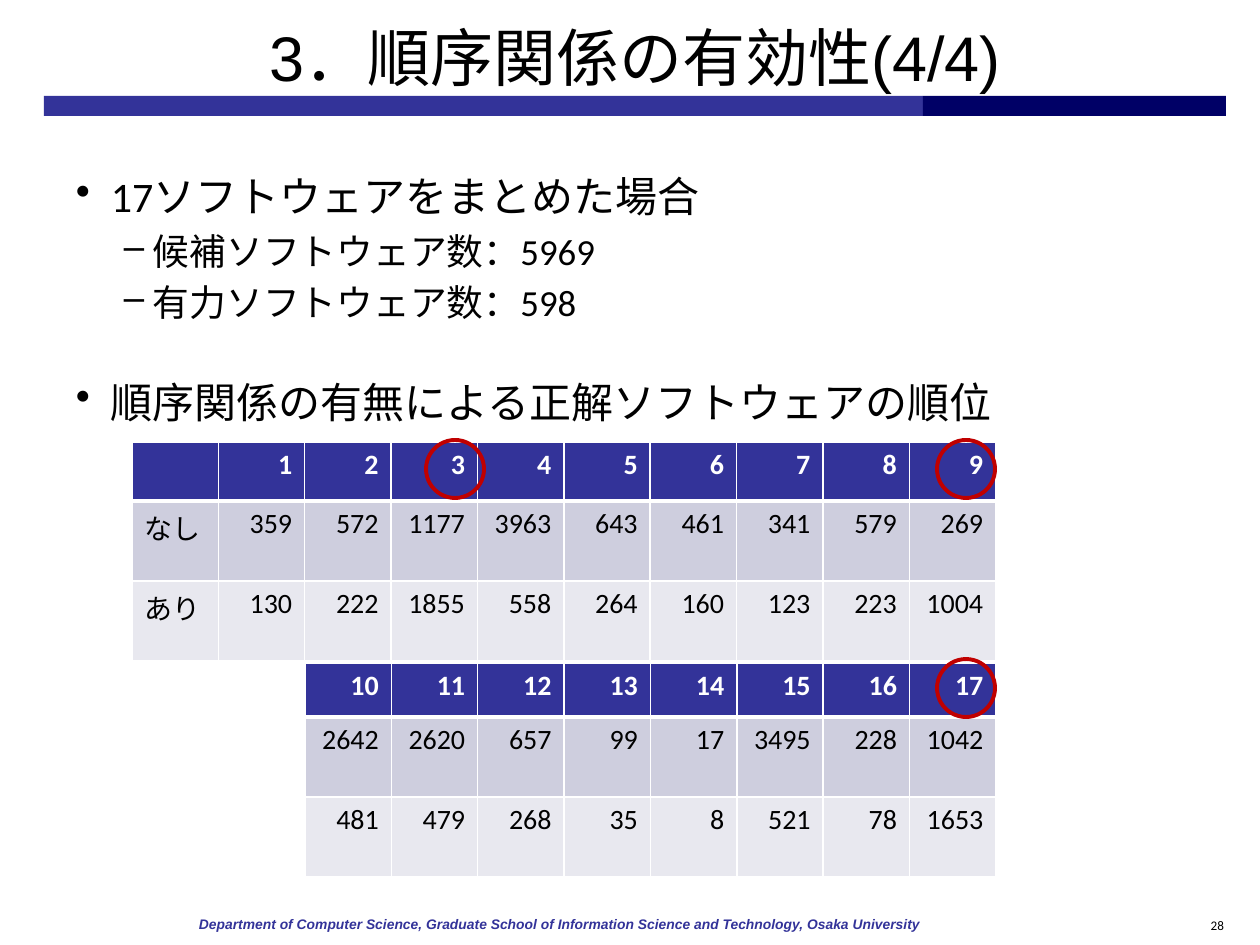
from dataclasses import dataclass

from lxml import etree
from pptx import Presentation
from pptx.dml.color import RGBColor
from pptx.enum.shapes import MSO_SHAPE
from pptx.enum.text import MSO_ANCHOR, PP_ALIGN
from pptx.oxml.ns import qn
from pptx.util import Pt

RECT, OVAL = MSO_SHAPE.RECTANGLE, MSO_SHAPE.OVAL
TOP, MIDDLE = MSO_ANCHOR.TOP, MSO_ANCHOR.MIDDLE
LEFT, CENTER, RIGHT = PP_ALIGN.LEFT, PP_ALIGN.CENTER, PP_ALIGN.RIGHT


@dataclass(frozen=True)
class Theme:
    """Colours, fonts and type sizes of the deck."""
    ink: str = "000000"
    white: str = "FFFFFF"
    bar: str = "333399"
    bar_end: str = "000066"
    bands: tuple = ("CECEDE", "E8E8EF")
    mark: str = "C00000"
    body: str = "Calibri"
    head: str = "Arial"
    title: float = 36
    level1: float = 24
    level2: float = 21
    cell: float = 16
    footer: float = 7.9
    number: float = 7.5


T = Theme()

RANKS_1_TO_9 = [
    ["", *range(1, 10)],
    ["なし", 359, 572, 1177, 3963, 643, 461, 341, 579, 269],
    ["あり", 130, 222, 1855, 558, 264, 160, 123, 223, 1004],
]
RANKS_10_TO_17 = [
    [*range(10, 18)],
    [2642, 2620, 657, 99, 17, 3495, 228, 1042],
    [481, 479, 268, 35, 8, 521, 78, 1653],
]


def px(n):
    """Convert px at 126 to the inch into EMU."""
    return round(n * 914400 / 126)


def add_run(p, text, size, font=T.body, color=T.ink, bold=False, italic=False):
    """Append one formatted run to a paragraph."""
    r = p.add_run()
    r.text = text
    r.font.size, r.font.name = Pt(size), font
    r.font.bold, r.font.italic = bold, italic
    r.font.color.rgb = RGBColor.from_string(color)


def add_frame(s, box, anchor=TOP, margins=(13, 6)):
    """Add a wrapping text box and return its text frame."""
    tf = s.shapes.add_textbox(*map(px, box)).text_frame
    tf.word_wrap, tf.vertical_anchor = True, anchor
    tf.margin_left = tf.margin_right = px(margins[0])
    tf.margin_top = tf.margin_bottom = px(margins[1])
    return tf


def add_preset(s, kind, box, fill=None, line=None):
    """Add a flat preset shape with an optional fill and outline."""
    sp = s.shapes.add_shape(kind, *map(px, box))
    sp.shadow.inherit = False
    if fill:
        sp.fill.solid()
        sp.fill.fore_color.rgb = RGBColor.from_string(fill)
    else:
        sp.fill.background()
    if line:
        sp.line.color.rgb = RGBColor.from_string(line)
        sp.line.width = Pt(2.25)
    else:
        sp.line.fill.background()


def add_title(s, x, y, w, h):
    """Place the title with the two-tone bar beneath it."""
    split, bar_h = 879, 20
    add_preset(s, RECT, (x, y + h, split, bar_h), T.bar)
    add_preset(s, RECT, (x + split, y + h, w - split, bar_h), T.bar_end)
    p = add_frame(s, (x, y, w, h), MIDDLE).paragraphs[0]
    p.alignment = CENTER
    for text, font in (("3．", T.head), ("順序関係の有効性", T.body), ("(4/4)", T.head)):
        add_run(p, text, T.title, font)


def add_bullet(p, text, level, before):
    """Fill a paragraph as a bullet of the given level."""
    char, margin, hang, size = (("•", 35, 35, T.level1), ("–", 77, 29, T.level2))[level]
    p.level = level
    p.space_before = Pt(before)
    pPr = p._p.get_or_add_pPr()
    pPr.set("marL", str(px(margin)))
    pPr.set("indent", str(px(-hang)))
    etree.SubElement(pPr, qn("a:buChar")).set("char", char)
    add_run(p, text, size)


def add_body(s, *box):
    """Place the bulleted summary."""
    items = [
        ("17ソフトウェアをまとめた場合", 0, 0),
        ("候補ソフトウェア数：5969", 1, 4.2),
        ("有力ソフトウェア数：598", 1, 4.2),
        ("順序関係の有無による正解ソフトウェアの順位", 0, 30),
    ]
    tf = add_frame(s, box)
    for i, item in enumerate(items):
        add_bullet(tf.add_paragraph() if i else tf.paragraphs[0], *item)


def set_borders(cell, row):
    """Draw white borders, heavier between the header and the data."""
    tcPr = cell._tc.get_or_add_tcPr()
    widths = {"L": 1, "R": 1, "T": 3 if row == 1 else 1, "B": 3 if row == 0 else 1}
    for i, (side, width) in enumerate(widths.items()):
        ln = etree.Element(qn(f"a:ln{side}"), w=str(Pt(width)))
        fill = etree.SubElement(ln, qn("a:solidFill"))
        etree.SubElement(fill, qn("a:srgbClr")).set("val", T.white)
        tcPr.insert(i, ln)


def add_ranks(s, x, y, w, h, rows):
    """Place a table of ranks with a header and two data rows."""
    data_h, cols = 80, len(rows[0])
    table = s.shapes.add_table(len(rows), cols, *map(px, (x, y, w, h))).table
    for col in table.columns:
        col.width = px(w / cols)
    for i, values in enumerate(rows):
        table.rows[i].height = px(data_h if i else h - 2 * data_h)
        for j, value in enumerate(values):
            cell = table.cell(i, j)
            cell.fill.solid()
            cell.fill.fore_color.rgb = RGBColor.from_string((T.bar, *T.bands)[i])
            set_borders(cell, i)
            p = cell.text_frame.paragraphs[0]
            p.alignment = LEFT if isinstance(value, str) else RIGHT
            if value != "":
                add_run(p, str(value), T.cell, color=T.ink if i else T.white, bold=i == 0)


def add_footer(s, x, y, w, h):
    """Place the department line and the slide number."""
    number_w = 79
    p = add_frame(s, (x, y, w - number_w, h), margins=(9, 5)).paragraphs[0]
    add_run(p, "Department of Computer Science, Graduate School of Information "
               "Science and Technology, Osaka University",
            T.footer, T.head, T.bar, bold=True, italic=True)
    p = add_frame(s, (x + w - number_w, y, number_w, h)).paragraphs[0]
    p.alignment = RIGHT
    add_run(p, "28", T.number)


def main():
    """Build the slide and save it."""
    prs = Presentation()
    prs.slide_width, prs.slide_height = px(1260), px(945)
    s = prs.slides.add_slide(prs.slide_layouts[6])
    add_title(s, 44, 16, 1182, 80)
    add_body(s, 63, 165, 1134, 679)
    add_ranks(s, 132, 442, 864, 219, RANKS_1_TO_9)
    add_ranks(s, 305, 663, 691, 214, RANKS_10_TO_17)
    for x, y in ((937, 440), (426, 440), (937, 659)):
        add_preset(s, OVAL, (x, y, 58, 58), line=T.mark)
    add_footer(s, 190, 911, 1047, 31)
    prs.save("out.pptx")


if __name__ == "__main__":
    main()
